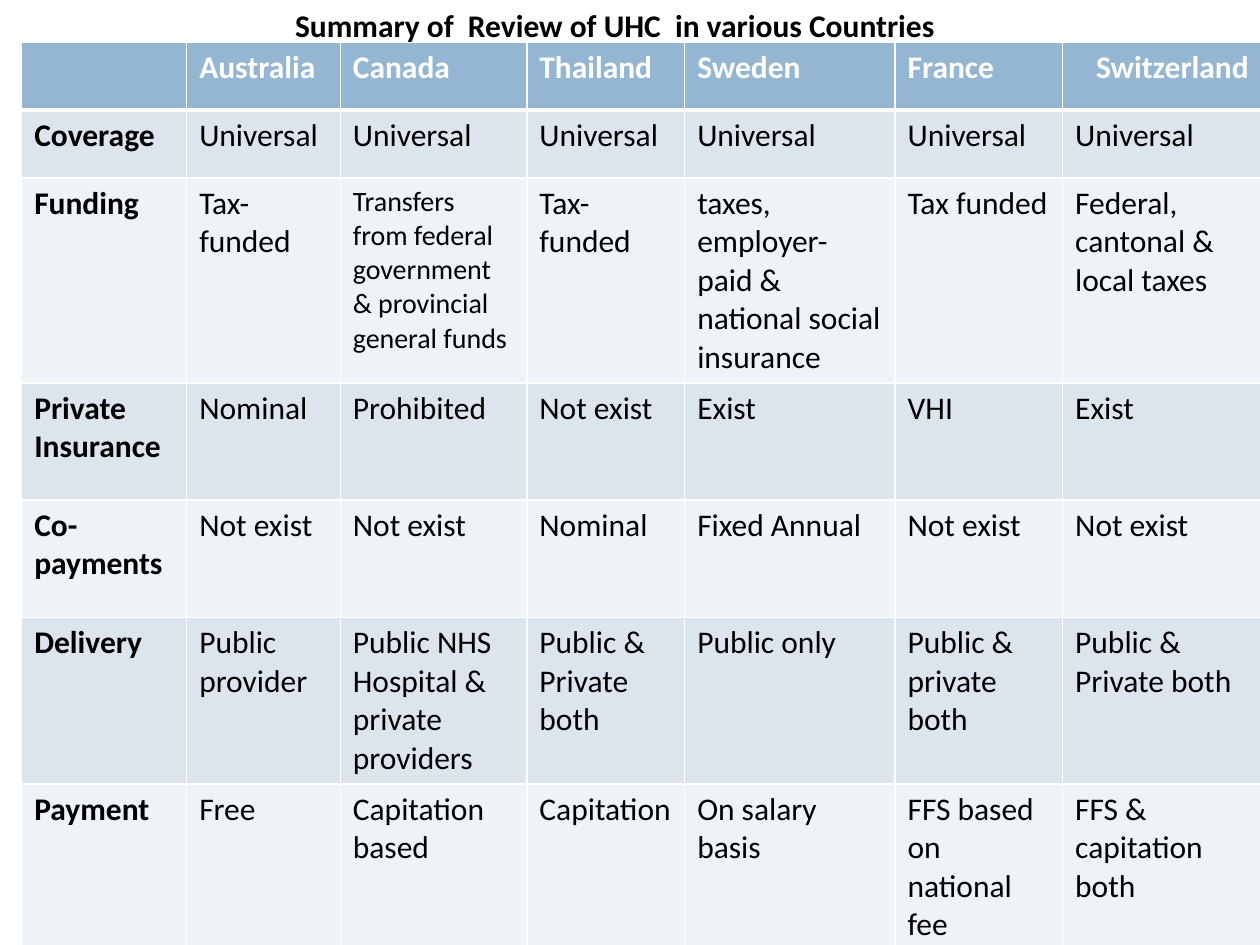
from typing import NamedTuple

from lxml.etree import SubElement
from pptx import Presentation
from pptx.dml.color import RGBColor as RGB
from pptx.enum.text import MSO_AUTO_SIZE as FIT, PP_ALIGN as AL
from pptx.oxml.ns import qn
from pptx.util import Pt

COLORS = {"header": "94B6D2", "odd": "DCE5EE", "even": "EEF3F7",
          "white": "FFFFFF", "black": "000000"}
COL_WIDTHS = [94.3, 87.8, 106.6, 90.2, 120.2, 95.8, 113.6]
HEADERS = ["", "Australia", "Canada", "Thailand", "Sweden", "France", "Switzerland"]


class Topic(NamedTuple):
    label: str
    height: float
    values: list[str]


TOPICS = [
    Topic("Coverage", 38.9, ["Universal"] * 6),
    Topic("Funding", 115.2, [
        "Tax-funded", "Transfers from federal government & provincial general funds",
        "Tax-funded", "taxes, employer-paid & national social insurance",
        "Tax funded", "Federal, cantonal & local taxes"]),
    Topic("Private Insurance", 67, [
        "Nominal", "Prohibited", "Not exist", "Exist", "VHI", "Exist"]),
    Topic("Co-payments", 67, [
        "Not exist", "Not exist", "Nominal", "Fixed Annual", "Not exist", "Not exist"]),
    Topic("Delivery", 67, [
        "Public provider", "Public NHS Hospital & private providers",
        "Public & Private both", "Public only", "Public & private both",
        "Public & Private both"]),
    Topic("Payment", 38.9, [
        "Free", "Capitation based", "Capitation", "On salary basis",
        "FFS based on national fee", "FFS & capitation both"]),
]


def add_run(p, text: str, color: str, bold: bool, size: float = 18) -> None:
    """Append one styled run to a paragraph."""
    r = p.add_run()
    r.text = text
    r.font.name, r.font.size, r.font.bold = "Calibri", Pt(size), bold
    r.font.color.rgb = RGB.from_string(COLORS[color])


def set_borders(cell, bottom: float, top: float) -> None:
    """Give a cell white borders ahead of its fill."""
    pr = cell._tc.get_or_add_tcPr()
    for i, (side, width) in enumerate(zip("LRTB", (1, 1, top, bottom))):
        ln = SubElement(pr, qn(f"a:ln{side}"), w=str(Pt(width)))
        fill = SubElement(ln, qn("a:solidFill"))
        SubElement(fill, qn("a:srgbClr"), val=COLORS["white"])
        pr.insert(i, ln)


def fill_row(table, row: int, height: float, texts: list[str]) -> None:
    """Write and style every cell of one table row."""
    header = row == 0
    fill = "header" if header else ("even", "odd")[row % 2]
    table.rows[row].height = Pt(height)
    for col, text in enumerate(texts):
        cell = table.cell(row, col)
        cell.fill.solid()
        cell.fill.fore_color.rgb = RGB.from_string(COLORS[fill])
        set_borders(cell, bottom=3 if header else 1, top=3 if row == 1 else 1)
        p = cell.text_frame.paragraphs[0]
        if text:
            add_run(p, text, "white" if header else "black", header or col == 0,
                    16 if text.startswith("Transfers") else 18)
        if text == "Switzerland":
            p.alignment = AL.RIGHT


def add_summary(slide) -> None:
    """Add the table comparing the countries."""
    s = slide.shapes.add_table(len(TOPICS) + 1, len(HEADERS), Pt(12.4), Pt(24),
                               Pt(sum(COL_WIDTHS)), Pt(503.3))
    for column, width in zip(s.table.columns, COL_WIDTHS):
        column.width = Pt(width)
    fill_row(s.table, 0, 38.9, HEADERS)
    for row, topic in enumerate(TOPICS, 1):
        fill_row(s.table, row, topic.height, [topic.label, *topic.values])
    s.height = Pt(503.3)


def add_title(slide) -> None:
    """Add the centred slide title."""
    tf = slide.shapes.add_textbox(Pt(160), Pt(0), Pt(383), Pt(29)).text_frame
    tf.word_wrap = False
    tf.auto_size = FIT.SHAPE_TO_FIT_TEXT
    p = tf.paragraphs[0]
    p.alignment = AL.CENTER
    add_run(p, "Summary of  Review of UHC  in various Countries", "black", True)


def main() -> None:
    """Build and save the slide."""
    prs = Presentation()
    prs.slide_width, prs.slide_height = Pt(720), Pt(540)
    slide = prs.slides.add_slide(prs.slide_layouts[6])
    add_summary(slide)
    add_title(slide)
    prs.save("out.pptx")


if __name__ == "__main__":
    main()
